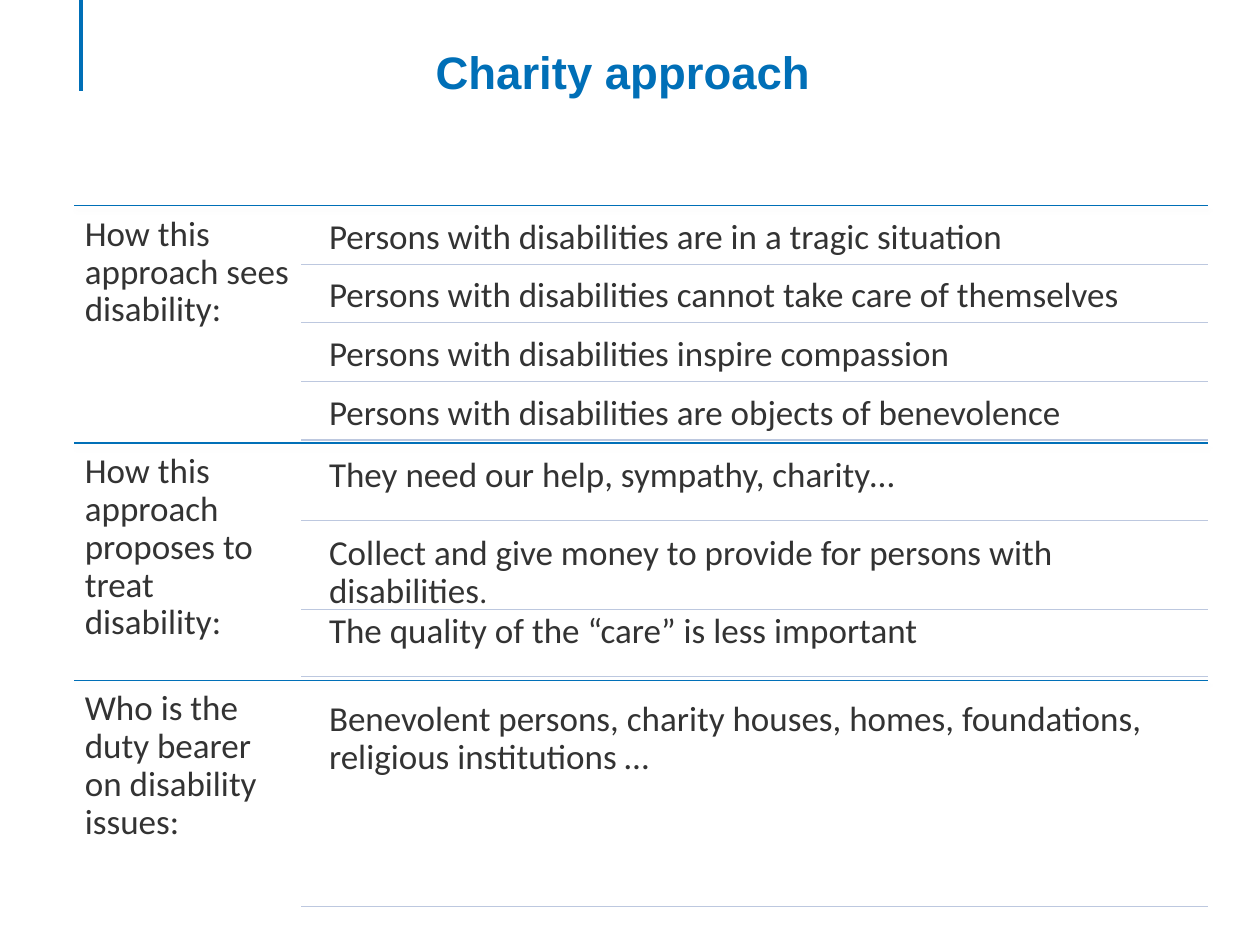
"""Builds the "Charity approach" slide: three labelled sections of ruled statements."""
from dataclasses import dataclass

from lxml.etree import SubElement
from pptx import Presentation
from pptx.dml.color import RGBColor as RGB
from pptx.enum.shapes import MSO_CONNECTOR as CONN
from pptx.enum.text import MSO_ANCHOR as ANCHOR, PP_ALIGN as ALIGN
from pptx.oxml.ns import qn
from pptx.util import Pt

TITLE = "Charity approach"
SECTIONS = [
    ("How this approach sees disability:", [
        "Persons with disabilities are in a tragic situation",
        "Persons with disabilities cannot take care of themselves",
        "Persons with disabilities inspire compassion",
        "Persons with disabilities are objects of benevolence",
    ]),
    ("How this approach proposes to treat disability:", [
        "They need our help, sympathy, charity…",
        ("Collect and give money to provide for persons with disabilities", "."),
        "The quality of the “care” is less important",
    ]),
    ("Who is the duty bearer on disability issues:", [
        "Benevolent persons, charity houses, homes, foundations, religious institutions …",
    ]),
]
RULE_SHIFT = {(1, 1): 6.3}


@dataclass(frozen=True)
class Theme:
    blue: RGB = RGB(0x00, 0x6F, 0xB7)
    pale: RGB = RGB(0xBD, 0xC8, 0xDF)
    ink: RGB = RGB(0x33, 0x33, 0x33)
    title_font: str = "Arial"
    body_font: str = "Calibri"
    title_size: float = 26
    body_size: float = 20
    stop_size: float = 18
    accent_width: float = 2
    rule_width: float = 0.75


T = Theme()
LEFT, RIGHT, TOP = 42.5, 690.5, 117.5
LABEL_W, RULE_X, ITEM_X = 129.6, 172.1, 182
SECTION_H, GAP_RATIO = 135.6, 0.05


def add_line(shapes, x1, y1, x2, y2, color, width, shadow=False):
    """Draw a straight line, with a soft shadow below it if asked."""
    s = shapes.add_connector(CONN.STRAIGHT, Pt(x1), Pt(y1), Pt(x2), Pt(y2))
    s.line.color.rgb = color
    s.line.width = Pt(width)
    effects = SubElement(s._element.spPr, qn("a:effectLst"))
    if shadow:
        outer = SubElement(effects, qn("a:outerShdw"), blurRad=str(Pt(3.1)),
                           dist=str(Pt(1.8)), dir="5400000", rotWithShape="0")
        black = SubElement(outer, qn("a:srgbClr"), val="000000")
        SubElement(black, qn("a:alpha"), val="35000")


def add_text(shapes, x, y, w, h, parts, inset, font, size, color):
    """Add a wrapped, top-anchored text box and return its paragraph."""
    s = shapes.add_textbox(Pt(x), Pt(y), Pt(w), Pt(h))
    tf = s.text_frame
    tf.word_wrap = True
    tf.vertical_anchor = ANCHOR.TOP
    tf.margin_left = tf.margin_right = tf.margin_top = tf.margin_bottom = Pt(inset)
    p = tf.paragraphs[0]
    p.font.name, p.font.size, p.font.color.rgb = font, Pt(size), color
    for part in parts:
        r = p.add_run()
        r.text = part
    return p


def add_body(shapes, x, y, w, h, text):
    """Add a label or statement; a second part of the text is set smaller."""
    parts = (text,) if isinstance(text, str) else text
    p = add_text(shapes, x, y, w, h, parts, 6, T.body_font, T.body_size, T.ink)
    p.line_spacing = 0.9
    for r in p.runs[1:]:
        r.font.size = Pt(T.stop_size)


def add_section(shapes, index, label, items):
    """Add one section, sharing its height equally among its items."""
    top = TOP + index * SECTION_H
    add_line(shapes, LEFT, top, RIGHT, top, T.blue, T.rule_width, shadow=True)
    add_body(shapes, LEFT, top, LABEL_W, SECTION_H, label)
    count = len(items)
    h = SECTION_H / (count + (count + 1) * GAP_RATIO)
    gap = h * GAP_RATIO
    for row, item in enumerate(items):
        y = top + gap + row * (h + gap)
        add_body(shapes, ITEM_X, y, RIGHT - ITEM_X, h, item)
        rule_y = y + h + RULE_SHIFT.get((index, row), 0)
        add_line(shapes, RULE_X, rule_y, RIGHT, rule_y, T.pale, T.rule_width)


def main():
    prs = Presentation()
    prs.slide_width, prs.slide_height = Pt(720), Pt(540)
    slide = prs.slides.add_slide(prs.slide_layouts[6])
    add_line(slide.shapes, 46.2, 0, 46.2, 52, T.blue, T.accent_width)
    p = add_text(slide.shapes, 58.3, 21.6, 595.4, 85.7, [TITLE], 3.6,
                 T.title_font, T.title_size, T.blue)
    p.alignment = ALIGN.CENTER
    p.font.bold = True
    group = slide.shapes.add_group_shape()
    for index, (label, items) in enumerate(SECTIONS):
        add_section(group.shapes, index, label, items)
    prs.save("out.pptx")


if __name__ == "__main__":
    main()
